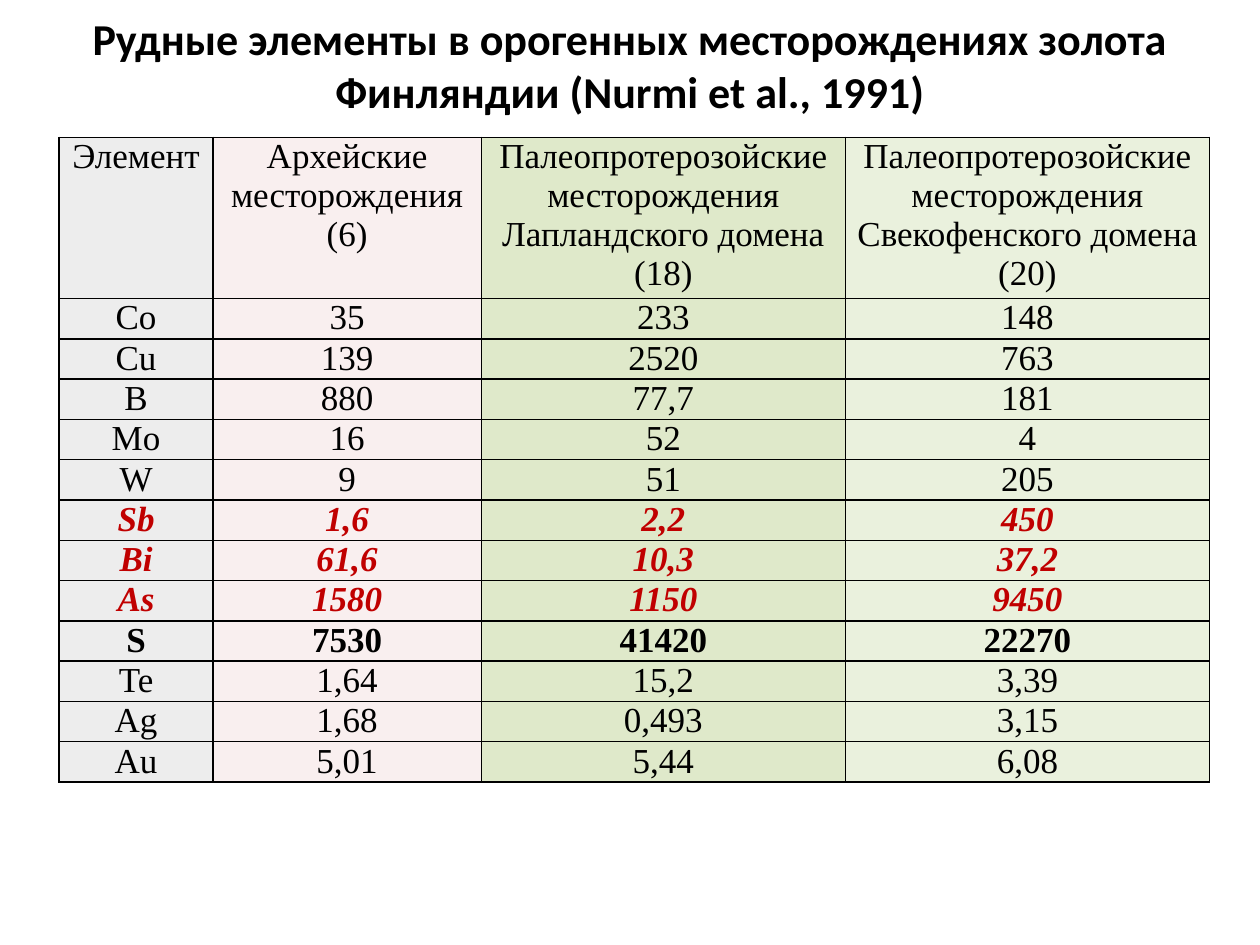
from lxml import etree
from pptx import Presentation
from pptx.dml.color import RGBColor
from pptx.enum import text
from pptx.oxml.ns import qn
from pptx.util import Inches, Pt

BLACK = RGBColor(0x00, 0x00, 0x00)
RED = RGBColor(0xC0, 0x00, 0x00)
GREY = RGBColor(0xD9, 0xD9, 0xD9)
PINK = RGBColor(0xF2, 0xDC, 0xDB)
OLIVE = RGBColor(0xC3, 0xD6, 0x9B)
LIGHT_GREEN = RGBColor(0xD7, 0xE4, 0xBD)

TITLE = "Рудные элементы в орогенных месторождениях золота Финляндии (Nurmi et al., 1991)"
COLUMN_WIDTHS = [1.22, 2.13, 2.89, 2.89]
COLUMN_FILLS = [(GREY, 45), (PINK, 44), (OLIVE, 53), (LIGHT_GREEN, 50)]
HEADER_HEIGHT = 1.28
ROW_HEIGHT = 0.32
ROWS = [
    [
        "Элемент",
        "Архейские месторождения (6)",
        "Палеопротерозойские месторождения Лапландского домена (18)",
        "Палеопротерозойские месторождения Свекофенского домена (20)",
    ],
    ["Co", "35", "233", "148"],
    ["Cu", "139", "2520", "763"],
    ["B", "880", "77,7", "181"],
    ["Mo", "16", "52", "4"],
    ["W", "9", "51", "205"],
    ["Sb", "1,6", "2,2", "450"],
    ["Bi", "61,6", "10,3", "37,2"],
    ["As", "1580", "1150", "9450"],
    ["S", "7530", "41420", "22270"],
    ["Te", "1,64", "15,2", "3,39"],
    ["Ag", "1,68", "0,493", "3,15"],
    ["Au", "5,01", "5,44", "6,08"],
]
HIGHLIGHT = {"color": RED, "bold": True, "italic": True}
ROW_FORMATS = {"Sb": HIGHLIGHT, "Bi": HIGHLIGHT, "As": HIGHLIGHT, "S": {"bold": True}}


def write_text(frame, content, font="Times New Roman", size=20, color=BLACK, bold=False, italic=False):
    paragraph = frame.paragraphs[0]
    paragraph.alignment = text.PP_ALIGN.CENTER
    run = paragraph.add_run()
    run.text = content
    run.font.name = font
    run.font.size = Pt(size)
    run.font.color.rgb = color
    run.font.bold = bold
    run.font.italic = italic


def fill_cell(cell, color, opacity):
    cell.fill.solid()
    cell.fill.fore_color.rgb = color
    color_element = cell._tc.tcPr.find(qn("a:solidFill"))[0]
    etree.SubElement(color_element, qn("a:alpha"), val=str(opacity * 1000))


def border_cell(cell, color=BLACK, width=1):
    properties = cell._tc.get_or_add_tcPr()
    for index, side in enumerate(("a:lnL", "a:lnR", "a:lnT", "a:lnB")):
        line = etree.Element(qn(side), w=str(Pt(width)))
        fill = etree.SubElement(line, qn("a:solidFill"))
        etree.SubElement(fill, qn("a:srgbClr"), val=str(color))
        properties.insert(index, line)


def add_title(slide):
    title = slide.shapes.title
    title.left, title.top = Inches(0), Inches(0)
    title.width, title.height = Inches(10), Inches(1.02)
    frame = title.text_frame
    frame.word_wrap = True
    frame.auto_size = text.MSO_AUTO_SIZE.NONE
    frame.vertical_anchor = text.MSO_ANCHOR.MIDDLE
    write_text(frame, TITLE, font="Calibri", size=25.2, bold=True)


def add_element_table(slide):
    height = HEADER_HEIGHT + ROW_HEIGHT * (len(ROWS) - 1)
    table = slide.shapes.add_table(
        len(ROWS), len(COLUMN_WIDTHS),
        Inches(0.47), Inches(1.09), Inches(sum(COLUMN_WIDTHS)), Inches(height),
    ).table
    for column, width in zip(table.columns, COLUMN_WIDTHS):
        column.width = Inches(width)
    for index, (row, values) in enumerate(zip(table.rows, ROWS)):
        row.height = Inches(ROW_HEIGHT if index else HEADER_HEIGHT)
        row_format = ROW_FORMATS.get(values[0], {})
        for cell, value, (color, opacity) in zip(row.cells, values, COLUMN_FILLS):
            cell.margin_left = cell.margin_right = Inches(0.07)
            cell.margin_top = cell.margin_bottom = 0
            write_text(cell.text_frame, value, **row_format)
            fill_cell(cell, color, opacity)
            border_cell(cell)


def main():
    presentation = Presentation()
    presentation.slide_width = Inches(10)
    presentation.slide_height = Inches(7.5)
    slide = presentation.slides.add_slide(presentation.slide_layouts[5])
    add_title(slide)
    add_element_table(slide)
    presentation.save("out.pptx")


if __name__ == "__main__":
    main()
